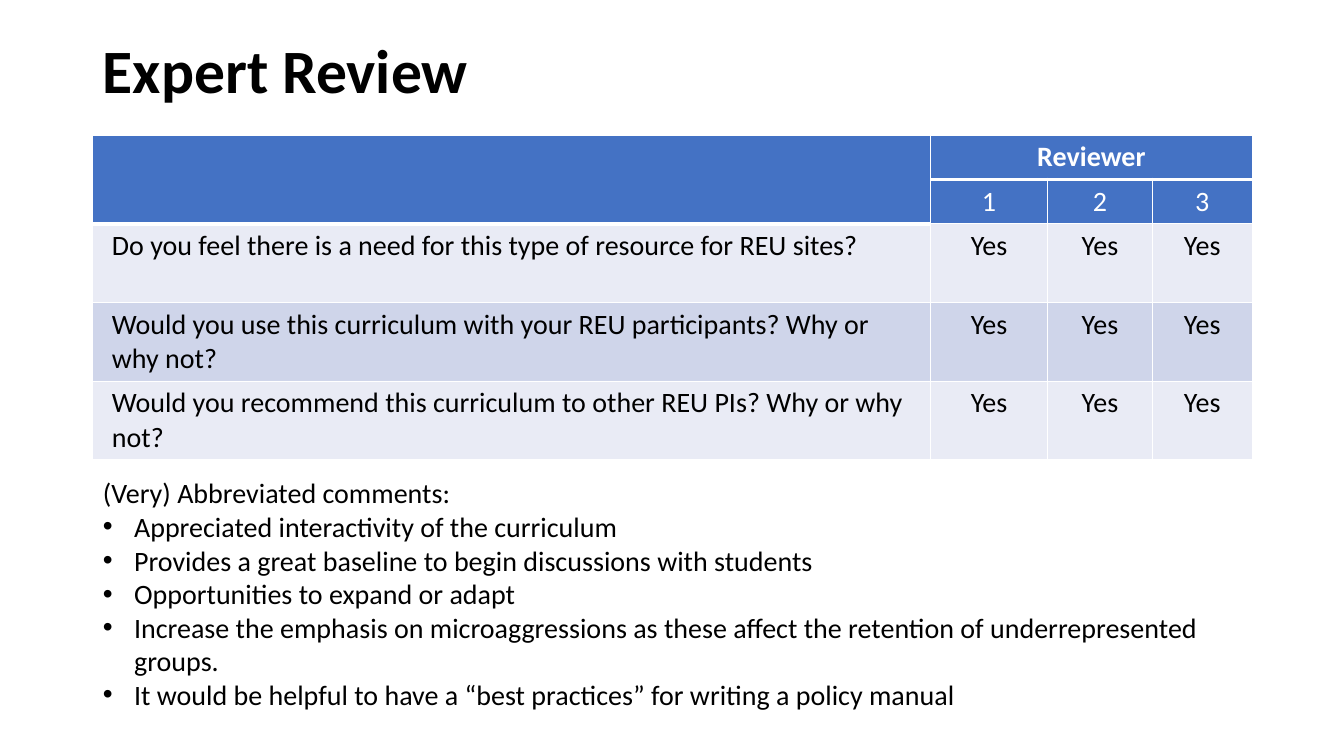
from lxml import etree
from pptx import Presentation, util as u
from pptx.dml.color import RGBColor
from pptx.enum import text
from pptx.oxml import ns

FONT = "Calibri"
LEFT, WIDTH = 0.92, 11.5
COLUMNS = [8.31, 1.16, 1.04, 0.99]
ROWS = [0.44, 0.44, 0.78, 0.78, 0.78]
HEADER, LIGHT, DARK = "4472C4", "E9EBF5", "CFD5EA"
ROW_FILLS = [HEADER, HEADER, LIGHT, DARK, LIGHT]
QUESTIONS = [
    "Do you feel there is a need for this type of resource for REU sites?",
    "Would you use this curriculum with your REU participants? Why or why not?",
    "Would you recommend this curriculum to other REU PIs? Why or why not?",
]
CELLS = [["", "Reviewer", "", ""], ["", "1", "2", "3"]]
CELLS += [[question] + ["Yes"] * 3 for question in QUESTIONS]
COMMENTS = [
    "Appreciated interactivity of the curriculum",
    "Provides a great baseline to begin discussions with students",
    "Opportunities to expand or adapt",
    "Increase the emphasis on microaggressions as these affect the retention of underrepresented groups.",
    "It would be helpful to have a “best practices” for writing a policy manual",
]


def color(value):
    """Turn a hex string into a colour."""
    return RGBColor.from_string(value)


def style(paragraph, size, value="000000", bold=False):
    """Set the font of a whole paragraph."""
    font = paragraph.font
    font.name, font.size, font.bold = FONT, u.Pt(size), bold
    font.color.rgb = color(value)


def place(shape, box):
    """Move a shape to a box given in inches."""
    shape.left, shape.top, shape.width, shape.height = map(u.Inches, box)


def add_title(slide, box):
    """Fill the title placeholder."""
    title = slide.shapes.title
    place(title, box)
    frame = title.text_frame
    frame.text = "Expert Review"
    frame.vertical_anchor = text.MSO_ANCHOR.MIDDLE
    paragraph = frame.paragraphs[0]
    paragraph.alignment = text.PP_ALIGN.LEFT
    paragraph.line_spacing = 0.9
    style(paragraph, 44, bold=True)


def rule_above(row, column):
    """Give the width of the line on top of a cell, heavier below the headings."""
    return 3 if row == 1 or (row, column) == (2, 0) else 1


def add_borders(cell, row, column):
    """Draw the white lines around a cell."""
    properties = cell._tc.get_or_add_tcPr()
    widths = {"L": 1, "R": 1, "T": rule_above(row, column), "B": rule_above(row + 1, column)}
    for side, width in widths.items():
        line = etree.SubElement(properties, ns.qn(f"a:ln{side}"), w=str(u.Pt(width)))
        fill = etree.SubElement(line, ns.qn("a:solidFill"))
        etree.SubElement(fill, ns.qn("a:srgbClr"), val="FFFFFF")


def format_cell(cell, row, column):
    """Write and format one table cell."""
    cell.text = CELLS[row][column]
    add_borders(cell, row, column)
    cell.fill.solid()
    cell.fill.fore_color.rgb = color(ROW_FILLS[row])
    cell.margin_left = cell.margin_right = u.Inches(0.19)
    cell.margin_top = cell.margin_bottom = u.Inches(0.05)
    paragraph = cell.text_frame.paragraphs[0]
    paragraph.alignment = text.PP_ALIGN.CENTER if column else text.PP_ALIGN.LEFT
    style(paragraph, 20, "FFFFFF" if row < 2 else "000000", bold=row == 0)


def add_reviews(slide, box):
    """Add the table of reviewer answers."""
    table = slide.shapes.add_table(len(ROWS), len(COLUMNS), *map(u.Inches, box)).table
    for column, width in zip(table.columns, COLUMNS):
        column.width = u.Inches(width)
    for row, height in zip(table.rows, ROWS):
        row.height = u.Inches(height)
    for row in range(len(ROWS)):
        for column in range(len(COLUMNS)):
            format_cell(table.cell(row, column), row, column)
    table.cell(0, 0).merge(table.cell(1, 0))
    table.cell(0, 1).merge(table.cell(0, 3))


def add_comments(slide, box):
    """Fill the body placeholder with the bulleted comments."""
    body = slide.placeholders[1]
    place(body, box)
    frame = body.text_frame
    frame.auto_size = text.MSO_AUTO_SIZE.NONE
    frame.text = "\n".join(["(Very) Abbreviated comments:"] + COMMENTS)
    for index, paragraph in enumerate(frame.paragraphs):
        indent = u.Inches(0.31) if index else 0
        properties = paragraph._p.get_or_add_pPr()
        properties.set("marL", str(indent))
        properties.set("indent", str(-indent))
        paragraph.space_before = u.Pt(0)
        if index:
            etree.SubElement(properties, ns.qn("a:buFont"), typeface="Arial")
            etree.SubElement(properties, ns.qn("a:buChar"), char="•")
        else:
            etree.SubElement(properties, ns.qn("a:buNone"))
        style(paragraph, 20)


def main():
    """Build and save the slide."""
    presentation = Presentation()
    presentation.slide_width, presentation.slide_height = u.Inches(13.33), u.Inches(7.5)
    slide = presentation.slides.add_slide(presentation.slide_layouts[1])
    add_title(slide, (LEFT, 0, WIDTH, 1.45))
    add_reviews(slide, (LEFT, 1.34, WIDTH, sum(ROWS)))
    add_comments(slide, (LEFT, 4.67, WIDTH, 2.6))
    presentation.save("out.pptx")


if __name__ == "__main__":
    main()
